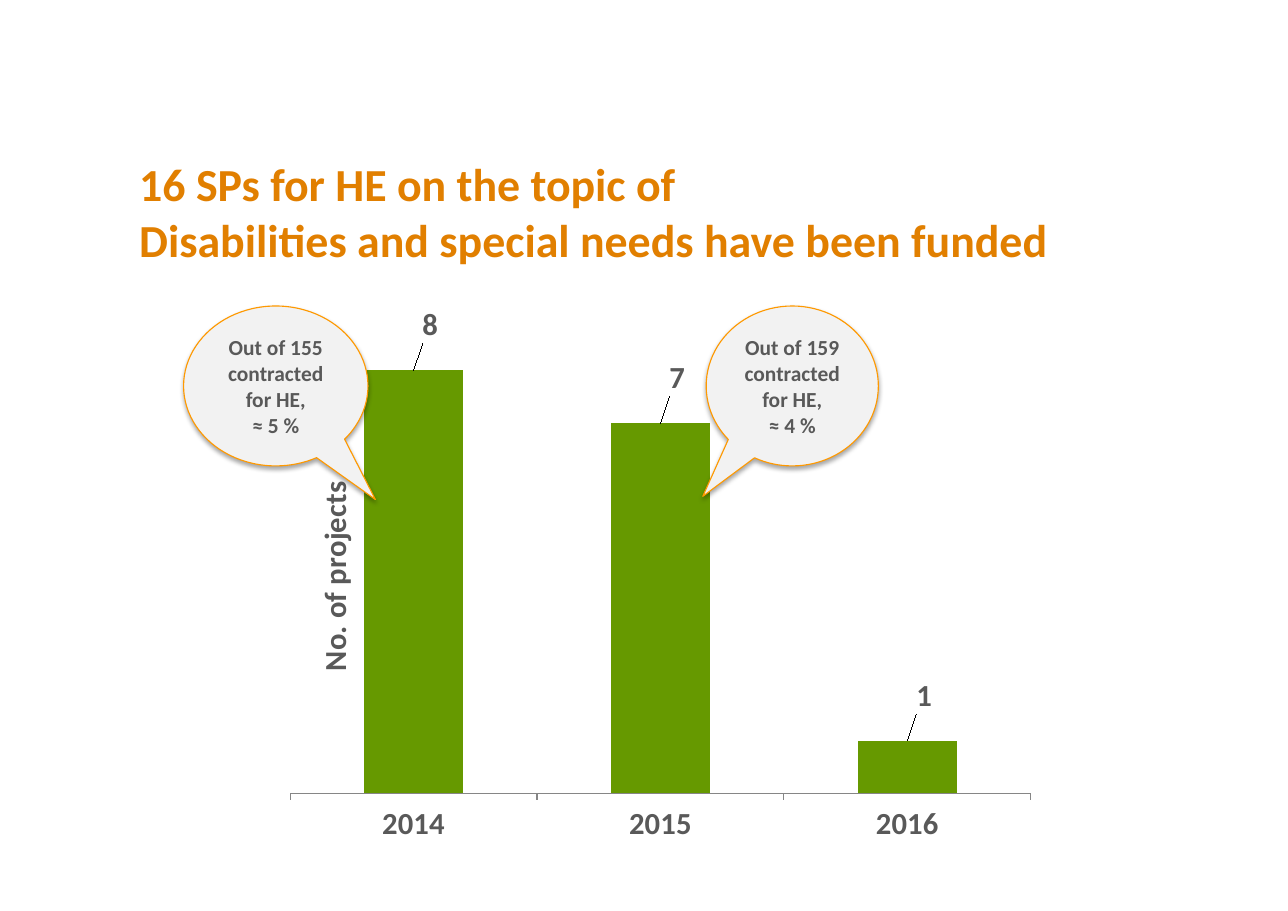
from dataclasses import dataclass

from lxml import etree
from pptx import Presentation
from pptx.chart import data as cd
from pptx.dml.color import RGBColor
from pptx.enum import chart as ec, shapes, text
from pptx.oxml import ns
from pptx.util import Pt


@dataclass(frozen=True)
class Theme:
    face: str = "Calibri"
    head: str = "E17F00"
    ink: str = "595959"
    bar: str = "669900"
    axis: str = "868686"
    pale: str = "F2F2F2"
    edge: str = "FF9900"
    big: int = 30
    mid: int = 20
    small: int = 14


THEME = Theme()


def tint(hue):
    return RGBColor.from_string(hue)


def style(font, size, hue):
    font.name, font.size, font.bold = THEME.face, Pt(size), True
    font.color.rgb = tint(hue)


def write(frame, lines, size, hue, align):
    frame.word_wrap = True
    frame.text = "\n".join(lines)
    for para in frame.paragraphs:
        para.alignment = align
        for run in para.runs:
            style(run.font, size, hue)


def layout(parent, index, **parts):
    """Give a chart part a manual layout, as its child number index."""
    for old in parent.findall(ns.qn("c:layout")):
        parent.remove(old)
    node = etree.Element(ns.qn("c:layout"))
    manual = etree.SubElement(node, ns.qn("c:manualLayout"))
    for name, value in parts.items():
        etree.SubElement(manual, ns.qn(f"c:{name}"), val=str(value))
    parent.insert(index, node)


def shade(shape):
    """Add a soft shadow below the shape."""
    shape.shadow.inherit = False
    glow = shape.element.spPr.find(ns.qn("a:effectLst"))
    outer = etree.SubElement(
        glow, ns.qn("a:outerShdw"), blurRad=str(Pt(3.1)), dist=str(Pt(1.8)),
        dir="5400000", rotWithShape="0")
    black = etree.SubElement(outer, ns.qn("a:srgbClr"), val="000000")
    etree.SubElement(black, ns.qn("a:alpha"), val="35000")


def title(slide, box, lines):
    frame = slide.shapes.add_textbox(*map(Pt, box)).text_frame
    frame.margin_left = frame.margin_right = Pt(8)
    frame.margin_top = frame.margin_bottom = Pt(4)
    write(frame, lines, THEME.big, THEME.head, text.PP_ALIGN.LEFT)


def bars(slide, box, years, counts, label):
    data = cd.CategoryChartData()
    data.categories = years
    data.add_series("Series 1", counts)
    chart = slide.shapes.add_chart(
        ec.XL_CHART_TYPE.COLUMN_CLUSTERED, *map(Pt, box), data).chart
    chart.has_legend = chart.has_title = False
    chart.font.name, chart.font.size = THEME.face, Pt(10)

    plot = chart.plots[0]
    plot.gap_width, plot.vary_by_categories = 150, False
    series = plot.series[0]
    series.format.fill.solid()
    series.format.fill.fore_color.rgb = tint(THEME.bar)
    tags = series.data_labels
    tags.show_value = True
    tags.position = ec.XL_LABEL_POSITION.OUTSIDE_END
    style(tags.font, THEME.mid, THEME.ink)
    for spot in range(len(counts)):
        tag = series.points[spot].data_label
        tag.position = ec.XL_LABEL_POSITION.OUTSIDE_END
        style(tag.font, THEME.mid, THEME.ink)

    base = chart.category_axis
    base.major_tick_mark = ec.XL_TICK_MARK.OUTSIDE
    base.format.line.color.rgb = tint(THEME.axis)
    style(base.tick_labels.font, THEME.mid, THEME.ink)

    scale = chart.value_axis
    scale.minimum_scale, scale.maximum_scale = 0, 9
    scale.has_major_gridlines = scale.visible = False
    write(scale.axis_title.text_frame, [label], THEME.mid, THEME.ink, None)

    root = chart.element
    head = root.xpath(".//c:valAx/c:title")[0]
    turn = head.xpath(".//a:bodyPr")[0]
    turn.set("rot", "-5400000")
    turn.set("vert", "horz")
    layout(head, 1, xMode="edge", yMode="edge", x=0.12, y=0.31)
    layout(root.xpath(".//c:plotArea")[0], 0, layoutTarget="inner",
           xMode="edge", yMode="edge", x=0.1, y=0.02, w=0.88, h=0.87)
    for tag in root.xpath(".//c:dLbl"):
        layout(tag, 1, x=0.02, y=-0.04)


def bubble(slide, box, lines, tip):
    shape = slide.shapes.add_shape(
        shapes.MSO_SHAPE.OVAL_CALLOUT, *map(Pt, box))
    shape.adjustments[0], shape.adjustments[1] = tip
    shape.fill.solid()
    shape.fill.fore_color.rgb = tint(THEME.pale)
    shape.line.color.rgb = tint(THEME.edge)
    shape.line.width = Pt(0.75)
    shade(shape)
    shape.text_frame.vertical_anchor = text.MSO_ANCHOR.MIDDLE
    write(shape.text_frame, lines, THEME.small, THEME.ink,
          text.PP_ALIGN.CENTER)


def main():
    deck = Presentation()
    deck.slide_width, deck.slide_height = Pt(841.7), Pt(595.4)
    slide = deck.slides.add_slide(deck.slide_layouts[6])
    title(slide, (83, 98, 715, 79),
          ["16 SPs for HE on the topic of",
           "Disabilities and special needs have been funded"])
    top = 200
    bars(slide, (134.6, top, 550, 358), ["2014", "2015", "2016"], [8, 7, 1],
         "No. of projects")
    notes = [(120, 120.5, 155, 5, (0.54, 0.71)),
             (461.5, 112.5, 159, 4, (-0.52, 0.69))]
    for left, width, total, share, tip in notes:
        bubble(slide, (left, top, width, 104.5),
               [f"Out of {total} contracted for HE,", f"≈ {share} %"], tip)
    deck.save("out.pptx")


if __name__ == "__main__":
    main()
